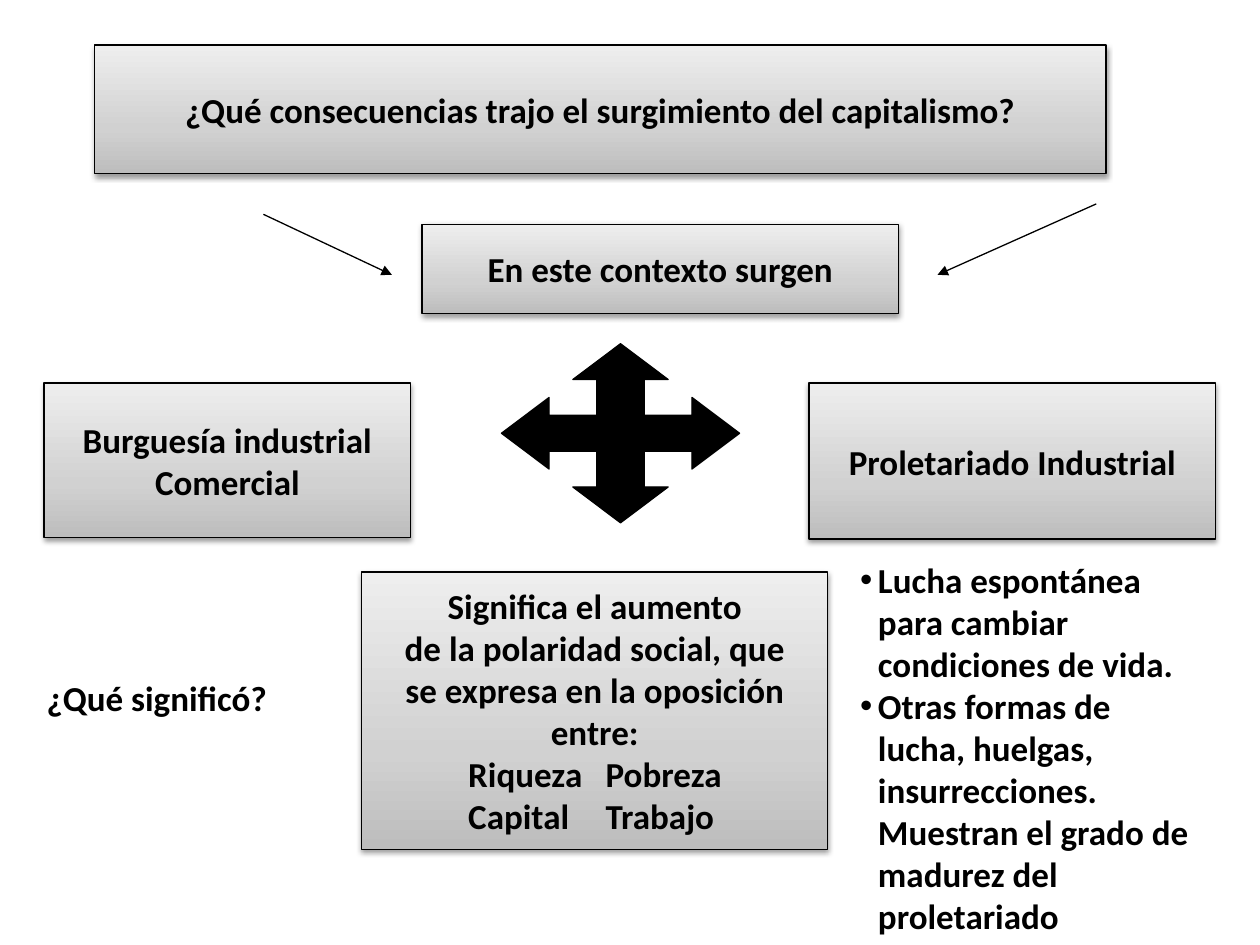
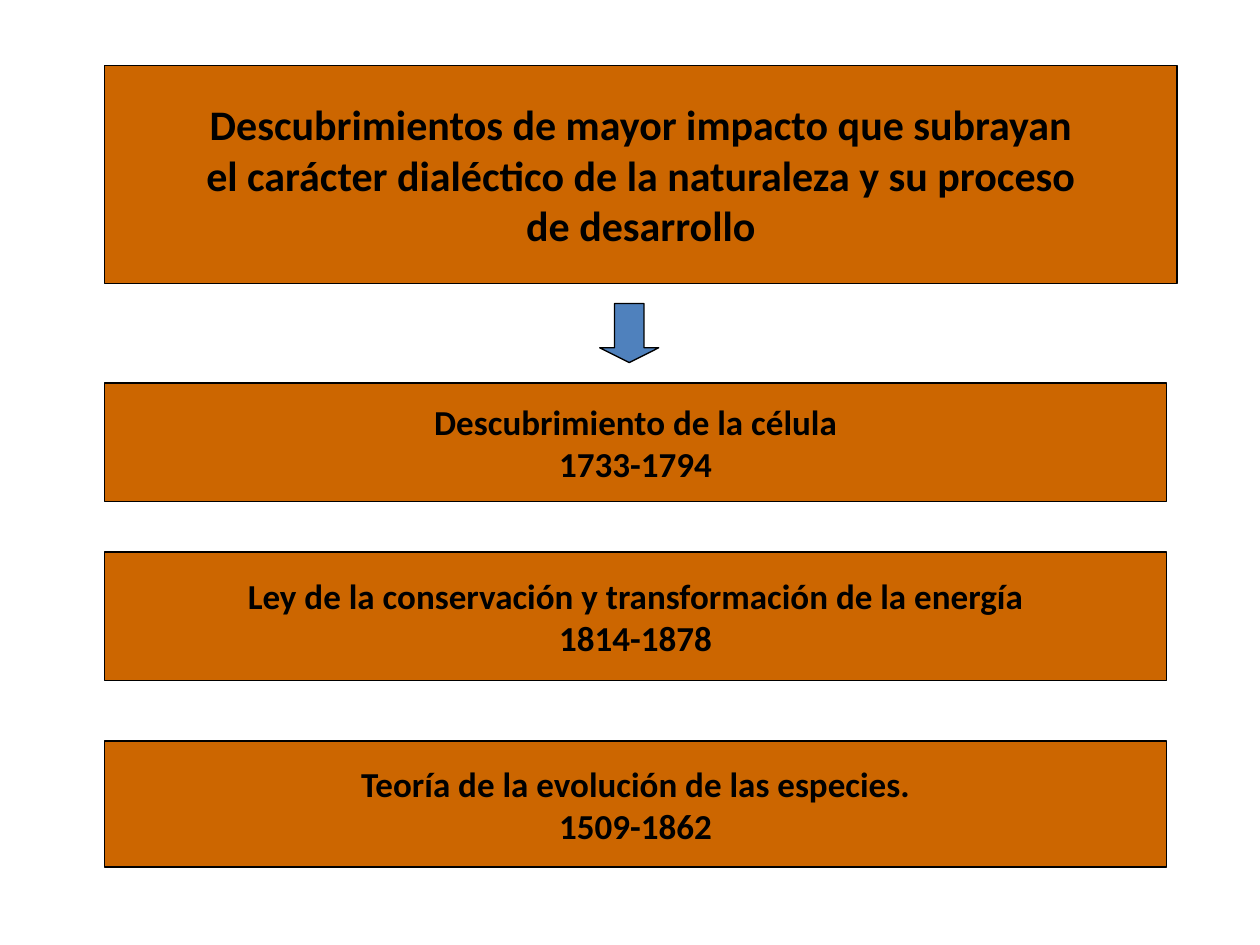
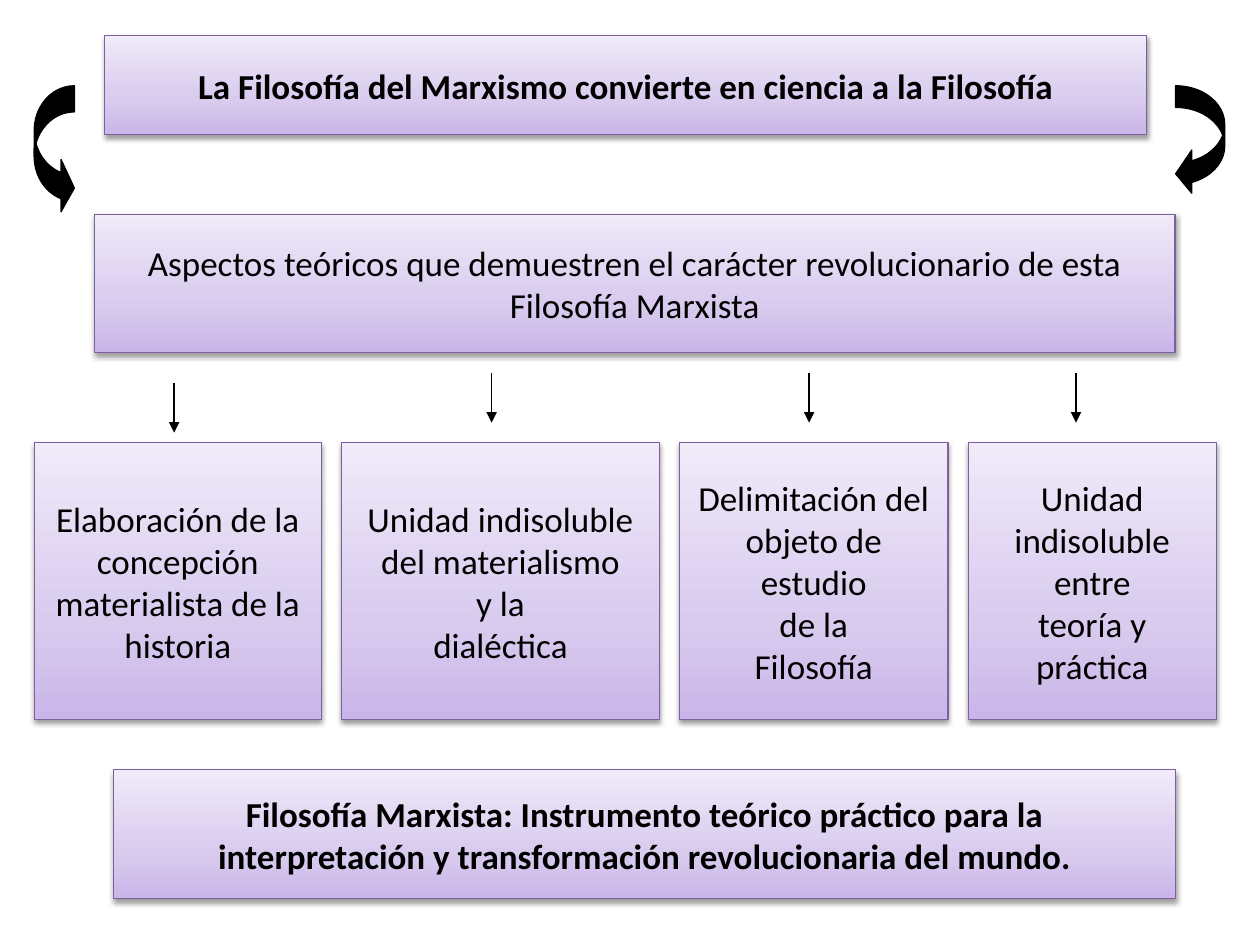
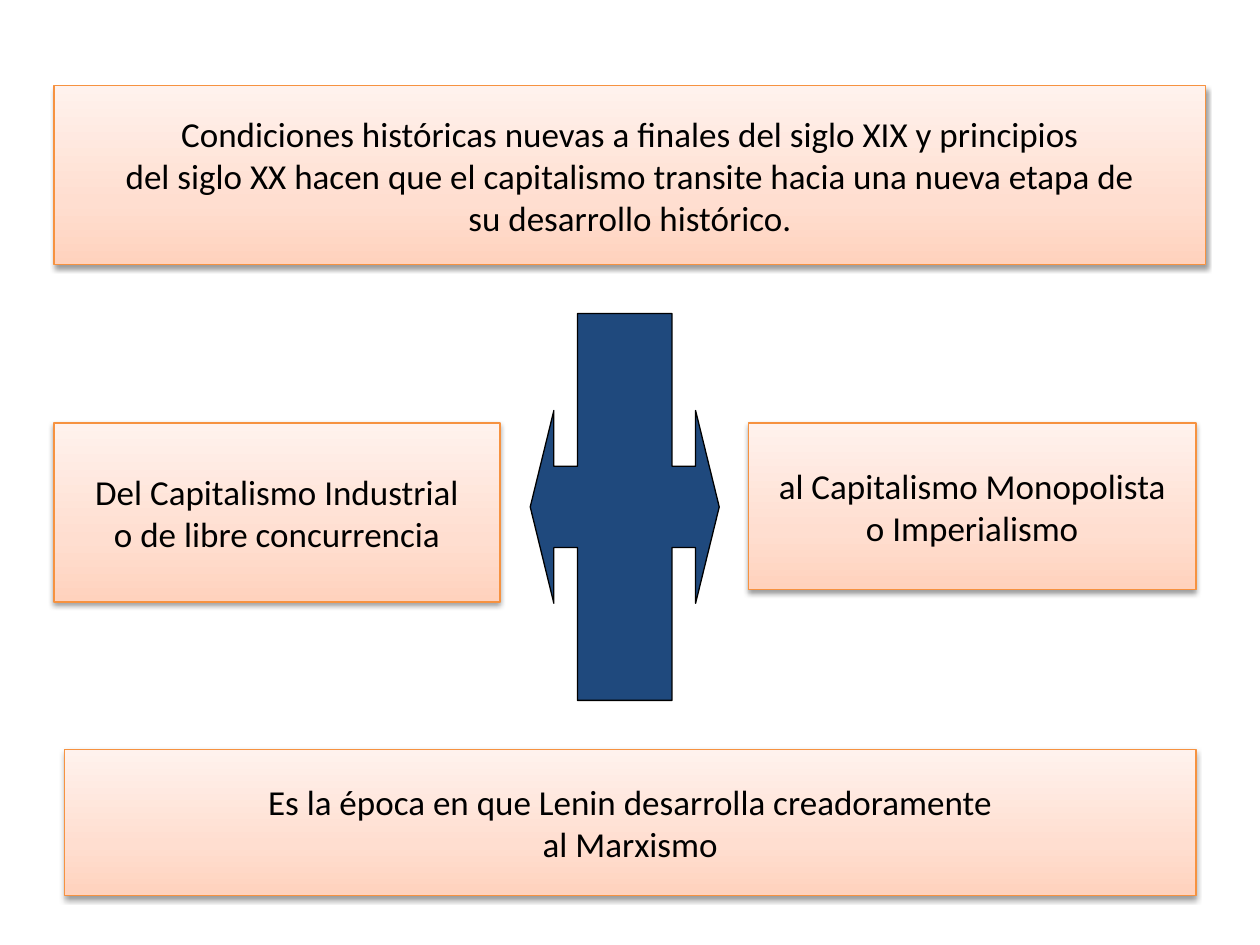
import copy
import dataclasses

import pptx
import pptx.dml.color
import pptx.enum.shapes
import pptx.enum.text
import pptx.oxml.ns
import pptx.util
from lxml import etree

Cm, Pt = pptx.util.Cm, pptx.util.Pt
MSO = pptx.enum.shapes.MSO_SHAPE
ALIGN = pptx.enum.text.PP_ALIGN
qn = pptx.oxml.ns.qn


@dataclasses.dataclass(frozen=True)
class Style:
    """Box look: gradient stops from bottom to top, or one flat colour."""
    fills: tuple
    line: str


@dataclasses.dataclass(frozen=True)
class Theme:
    font: str = "Calibri"
    body: int = 20
    title: int = 24
    line_width: float = 0.75
    black: str = "000000"
    blue: str = "4F81BD"
    navy: str = "1F497D"
    stops: tuple = (0, 0.35, 1)
    tabs: tuple = (1.9, 4.67)
    hanging: float = 0.36
    gray: Style = Style(("BDBDBD", "D1D1D1", "EEEEEE"), "000000")
    brown: Style = Style(("CC6600",), "000000")
    violet: Style = Style(("C9B5E8", "D8CBEE", "F0EAF9"), "7D60A0")
    peach: Style = Style(("FFD2BD", "FFDED0", "FFF2ED"), "F69240")


T = Theme()

# Places are (left, top, width, height) in centimetres.
CAPITALISM_BOXES = [
    ((1.9, 0.91, 20.4, 2.59), ["¿Qué consecuencias trajo el surgimiento del capitalismo?"]),
    ((8.51, 4.52, 9.6, 1.8), ["En este contexto surgen"]),
    ((0.89, 7.72, 7.39, 3.12), ["Burguesía industrial", "Comercial"]),
    ((16.31, 7.72, 8.2, 3.15), ["Proletariado Industrial"]),
    ((7.29, 11.53, 9.4, 5.59), [
        "Significa el aumento", "de la polaridad social, que", "se expresa en la oposición",
        "entre:", "\tRiqueza\tPobreza", "\tCapital\tTrabajo"]),
]
QUESTION = ((0.69, 13.51, 5.99, 1.09), ["¿Qué significó?"])
STRUGGLE_PLACE = (17.09, 11.13, 8.3, 7.9)
STRUGGLES = [
    ["Lucha espontánea", "para cambiar", "condiciones de vida."],
    ["Otras formas de", "lucha, huelgas,", "insurrecciones.",
     "Muestran el grado de", "madurez del", "proletariado"],
]
CONTEXT_ARROWS = [(5.31, 4.32, 7.9, 5.54), (22.1, 4.11, 18.9, 5.54)]
CROSS_PLACE = (10.11, 6.93, 4.8, 3.61)
CROSS_QUARTER = [(0, -1), (-0.4, -0.6), (-0.2, -0.6), (-0.2, -0.2), (-0.6, -0.2), (-0.6, -0.4)]

DISCOVERY_TITLE = ((2.11, 1.32, 21.62, 4.39), [
    "Descubrimientos de mayor impacto que subrayan",
    "el carácter dialéctico de la naturaleza y su proceso", "de desarrollo"])
DISCOVERIES = [
    (7.72, 2.39, ["Descubrimiento de la célula", "1733-1794"]),
    (11.13, 2.59, ["Ley de la conservación y transformación de la energía", "1814-1878"]),
    (14.94, 2.54, ["Teoría de la evolución de las especies.", "1509-1862"]),
]

MARXISM_BANDS = [
    ((2.11, 0.71, 21.01, 2.01), True,
     ["La Filosofía del Marxismo convierte en ciencia a la Filosofía"]),
    ((1.9, 4.32, 21.79, 2.79), False,
     ["Aspectos teóricos que demuestren el carácter revolucionario de esta",
      "Filosofía Marxista"]),
    ((2.29, 15.52, 21.41, 2.59), True,
     ["Filosofía Marxista: Instrumento teórico práctico para la",
      "interpretación y transformación revolucionaria del mundo."]),
]
# Card width, arrow x, arrow top, lines
ASPECTS = [
    (5.79, 3.51, 7.72, ["Elaboración de la", "concepción", "materialista de la", "historia"]),
    (6.4, 9.91, 7.52, ["Unidad indisoluble", "del materialismo", "y la", "dialéctica"]),
    (5.41, 16.31, 7.52, ["Delimitación del", "objeto de", "estudio", "de la", "Filosofía"]),
    (5, 21.69, 7.52, ["Unidad", "indisoluble", "entre", "teoría y", "práctica"]),
]
CARD_LEFT, CARD_TOP, CARD_HEIGHT, CARD_GAP, ARROW_LENGTH = 0.69, 8.92, 5.59, 0.41, 1

IMPERIALISM_BOXES = [
    ((1.09, 8.53, 8.99, 3.61), ["Del Capitalismo Industrial", "o de libre concurrencia"]),
    ((15.09, 8.53, 9.02, 3.35), ["al Capitalismo Monopolista", "o Imperialismo"]),
    ((1.09, 1.73, 23.22, 3.61), [
        "Condiciones históricas nuevas a finales del siglo XIX y principios",
        "del siglo XX hacen que el capitalismo transite hacia una nueva etapa de",
        "su desarrollo histórico."]),
    ((1.3, 15.11, 22.81, 2.95), [
        "Es la época en que Lenin desarrolla creadoramente", "al Marxismo"]),
]


def rgb(value):
    return pptx.dml.color.RGBColor.from_string(value)


def sub(parent, tag, **attrs):
    return etree.SubElement(parent, qn(tag), {k: str(v) for k, v in attrs.items()})


def set_line(sp, color):
    sp.line.color.rgb = rgb(color)
    sp.line.width = Pt(T.line_width)


def paint(sp, fill, line=T.black):
    sp.shadow.inherit = False
    sp.fill.solid()
    sp.fill.fore_color.rgb = rgb(fill)
    set_line(sp, line)


def paint_gradient(sp, style):
    """Three-stop gradient with a soft shadow below."""
    sp.fill.gradient()
    sp.fill.gradient_angle = 90
    stop_list = sp._element.spPr.find(".//" + qn("a:gsLst"))
    stop_list.append(copy.deepcopy(stop_list[-1]))
    for stop, position, color in zip(sp.fill.gradient_stops, T.stops, style.fills):
        stop.position = position
        stop.color.rgb = rgb(color)
    set_line(sp, style.line)
    sp.shadow.inherit = False
    effects = sp._element.spPr.find(qn("a:effectLst"))
    shadow = sub(effects, "a:outerShdw", blurRad=Pt(3.1), dist=Pt(1.6),
                 dir=5400000, rotWithShape=0)
    sub(sub(shadow, "a:srgbClr", val=T.black), "a:alpha", val=38000)


def write(sp, lines, size=T.body, bold=True, align=ALIGN.CENTER):
    tf = sp.text_frame
    tf.word_wrap = True
    tf.text = "\n".join(lines)
    for p in tf.paragraphs:
        p.alignment = align
        if "\t" in p.text:
            p.alignment = ALIGN.LEFT
            tabs = sub(p._p.get_or_add_pPr(), "a:tabLst")
            for stop in T.tabs:
                sub(tabs, "a:tab", pos=Cm(stop), algn="l")
        for r in p.runs:
            r.font.name, r.font.size, r.font.bold = T.font, Pt(size), bold
            r.font.color.rgb = rgb(T.black)
    return tf


def add_box(slide, place, lines, style, size=T.body, bold=True):
    sp = slide.shapes.add_shape(MSO.RECTANGLE, *map(Cm, place))
    if len(style.fills) == 1:
        paint(sp, style.fills[0], style.line)
    else:
        paint_gradient(sp, style)
    write(sp, lines, size, bold)


def add_text(slide, place, lines):
    sp = slide.shapes.add_textbox(*map(Cm, place))
    return write(sp, lines, align=ALIGN.LEFT)


def add_bullets(slide, place, items):
    """Each item is a list of lines; its first line carries the bullet."""
    tf = add_text(slide, place, [line for item in items for line in item])
    starts = [i == 0 for item in items for i in range(len(item))]
    for p, is_start in zip(tf.paragraphs, starts):
        pPr = p._p.get_or_add_pPr()
        pPr.set("marL", str(Cm(T.hanging)))
        if is_start:
            pPr.set("indent", str(-Cm(T.hanging)))
            sub(pPr, "a:buFont", typeface="Arial")
            sub(pPr, "a:buChar", char="•")


def add_arrow(slide, *ends):
    c = slide.shapes.add_connector(pptx.enum.shapes.MSO_CONNECTOR.STRAIGHT, *map(Cm, ends))
    set_line(c, T.black)
    spPr = c._element.spPr
    sub(spPr.find(qn("a:ln")), "a:tailEnd", type="triangle")
    sub(spPr, "a:effectLst")


def add_block_arrow(slide, kind, place, adjustments, fill):
    sp = slide.shapes.add_shape(kind, *map(Cm, place))
    for i, value in enumerate(adjustments):
        sp.adjustments[i] = value
    paint(sp, fill)


def add_cross(slide, place):
    """Four-headed arrow: one quarter of the outline, turned four times."""
    left, top, width, height = place
    quarter, outline = CROSS_QUARTER, []
    for _ in range(4):
        outline += quarter
        quarter = [(y, -x) for x, y in quarter]
    points = [(Cm(left + width * (1 + x) / 2), Cm(top + height * (1 + y) / 2))
              for x, y in outline]
    builder = slide.shapes.build_freeform(*points[0])
    builder.add_line_segments(points[1:], close=True)
    paint(builder.convert_to_shape(), T.black)


def build_capitalism(slide):
    for place, lines in CAPITALISM_BOXES:
        add_box(slide, place, lines, T.gray)
    add_text(slide, *QUESTION)
    add_bullets(slide, STRUGGLE_PLACE, STRUGGLES)
    for ends in CONTEXT_ARROWS:
        add_arrow(slide, *ends)
    add_cross(slide, CROSS_PLACE)


def build_discoveries(slide):
    add_box(slide, *DISCOVERY_TITLE, T.brown, T.title)
    for top, height, lines in DISCOVERIES:
        add_box(slide, (2.11, top, 21.41, height), lines, T.brown)
    add_block_arrow(slide, MSO.DOWN_ARROW, (12.09, 6.12, 1.19, 1.19), (0.5, 0.25), T.blue)


def build_marxism(slide):
    for place, bold, lines in MARXISM_BANDS:
        add_box(slide, place, lines, T.violet, bold=bold)
    left = CARD_LEFT
    for width, x, top, lines in ASPECTS:
        add_box(slide, (left, CARD_TOP, width, CARD_HEIGHT), lines, T.violet, bold=False)
        add_arrow(slide, x, top, x, top + ARROW_LENGTH)
        left += width + CARD_GAP
    add_block_arrow(slide, MSO.CURVED_LEFT_ARROW, (23.7, 1.73, 0.99, 2.21),
                    (0.44, 0.88, 0.33), T.black)
    add_block_arrow(slide, MSO.CURVED_RIGHT_ARROW, (0.69, 1.73, 0.81, 2.59),
                    (0.65, 1.3, 0.33), T.black)


def build_imperialism(slide):
    for place, lines in IMPERIALISM_BOXES:
        add_box(slide, place, lines, T.peach, bold=False)
    add_block_arrow(slide, MSO.LEFT_RIGHT_ARROW_CALLOUT, (10.69, 6.32, 3.81, 7.8),
                    (0.43, 0.51, 0.125, 0.5), T.navy)


def main():
    prs = pptx.Presentation()
    prs.slide_width, prs.slide_height = Cm(25.4), Cm(19.05)
    for build in (build_capitalism, build_discoveries, build_marxism, build_imperialism):
        build(prs.slides.add_slide(prs.slide_layouts[6]))
    prs.save("out.pptx")


if __name__ == "__main__":
    main()
